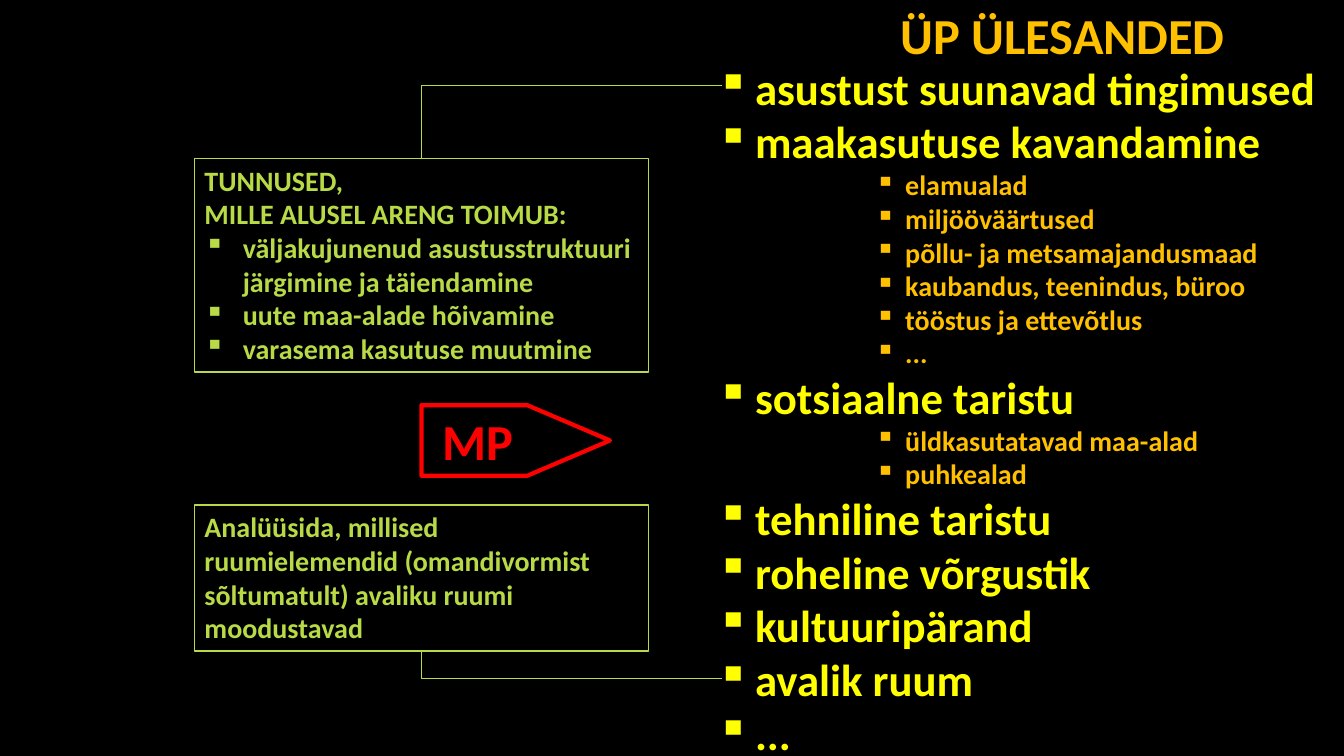
from lxml import etree
from pptx import Presentation
from pptx.dml.color import RGBColor
from pptx.enum.shapes import MSO_CONNECTOR as Connector, MSO_SHAPE as Shape
from pptx.enum.text import MSO_ANCHOR as Anchor, PP_ALIGN as Align
from pptx.oxml.ns import qn
from pptx.util import Inches, Pt

# Content
TITLE = "ÜP ÜLESANDED"
TASKS = [
    ("asustust suunavad tingimused", []),
    ("maakasutuse kavandamine", [
        "elamualad", "miljööväärtused", "põllu- ja metsamajandusmaad",
        "kaubandus, teenindus, büroo", "tööstus ja ettevõtlus", "..."]),
    ("sotsiaalne taristu", ["üldkasutatavad maa-alad", "puhkealad"]),
    ("tehniline taristu", []),
    ("roheline võrgustik", []),
    ("kultuuripärand", []),
    ("avalik ruum", []),
    ("...", []),
]
FEATURE_HEADING = ["TUNNUSED,", "MILLE ALUSEL ARENG TOIMUB:"]
FEATURES = [
    "väljakujunenud asustusstruktuuri järgimine ja täiendamine",
    "uute maa-alade hõivamine",
    "varasema kasutuse muutmine",
]
ANALYSIS = ("Analüüsida, millised ruumielemendid (omandivormist sõltumatult) "
            "avaliku ruumi moodustavad")
ARROW_LABEL = "MP"

COLORS = {"background": "000000", "title": "FFC000", "task": "FFFF00",
          "subtask": "FFC000", "box": "B7DA46", "arrow": "FF0000"}
FONT = "Calibri"

# Layout in inches
BOX_LEFT, BOX_WIDTH = 1.93, 4.5
FEATURE_TOP, FEATURE_HEIGHT = 1.57, 2.12
ANALYSIS_TOP, ANALYSIS_HEIGHT = 5.01, 1.45
BOX_CENTER = BOX_LEFT + BOX_WIDTH / 2
TASK_EDGE = 7.16
ARROW_WIDTH, ARROW_HEIGHT, ARROW_TIP = 1.87, 0.7, 0.82
BULLET_INDENT, SUB_MARGIN, SUB_INDENT = 0.38, 1.87, 0.3


def color(name):
    return RGBColor.from_string(COLORS[name])


def write(paragraph, text, size, color_name):
    paragraph.text = text
    for run in paragraph.runs:
        run.font.name = FONT
        run.font.size = Pt(size)
        run.font.bold = True
        run.font.color.rgb = color(color_name)


def add_bullet(paragraph, margin, hanging):
    properties = paragraph._p.get_or_add_pPr()
    properties.set("marL", str(Inches(margin)))
    properties.set("indent", str(-Inches(hanging)))
    etree.SubElement(properties, qn("a:buChar")).set("char", "▪")


def next_paragraph(frame):
    first = frame.paragraphs[0]
    return frame.add_paragraph() if first.runs else first


def outline(kind, left, top, width, height, color_name, weight):
    shape = slide.shapes.add_shape(
        kind, Inches(left), Inches(top), Inches(width), Inches(height))
    shape.shadow.inherit = False
    shape.fill.background()
    shape.line.color.rgb = color(color_name)
    shape.line.width = Pt(weight)
    shape.text_frame.word_wrap = True
    return shape


def add_box(top, height, lines):
    frame = outline(Shape.RECTANGLE, BOX_LEFT, top, BOX_WIDTH, height,
                    "box", 1).text_frame
    frame.vertical_anchor = Anchor.TOP
    for text, bulleted in lines:
        paragraph = next_paragraph(frame)
        paragraph.alignment = Align.LEFT
        if bulleted:
            add_bullet(paragraph, BULLET_INDENT, BULLET_INDENT)
        write(paragraph, text, 20, "box")


def link_to_task(task_y, box_y):
    link = slide.shapes.add_connector(
        Connector.ELBOW, Inches(TASK_EDGE), Inches(task_y),
        Inches(BOX_CENTER), Inches(box_y))
    link.line.color.rgb = color("box")
    link.line.width = Pt(1)
    properties = link._element.spPr
    properties.find(qn("a:prstGeom")).set("prst", "bentConnector2")
    etree.SubElement(properties, qn("a:effectLst"))


presentation = Presentation()
presentation.slide_width = Inches(13.33)
presentation.slide_height = Inches(7.5)
slide = presentation.slides.add_slide(presentation.slide_layouts[5])
slide.background.fill.solid()
slide.background.fill.fore_color.rgb = color("background")

# Title
title = slide.shapes.title
title.left, title.top = Inches(2.84), Inches(-0.01)
title.width, title.height = Inches(9.41), Inches(0.71)
title.text_frame.vertical_anchor = Anchor.TOP
heading = title.text_frame.paragraphs[0]
write(heading, TITLE, 36, "title")
heading.alignment = Align.RIGHT

# Task list
task_list = slide.shapes.add_textbox(
    Inches(7.01), Inches(0.55), Inches(6.32), Inches(7.1)).text_frame
task_list.word_wrap = True
for task, subtasks in TASKS:
    paragraph = next_paragraph(task_list)
    add_bullet(paragraph, BULLET_INDENT, BULLET_INDENT)
    write(paragraph, task, 32, "task")
    for subtask in subtasks:
        paragraph = next_paragraph(task_list)
        paragraph.level = 1
        add_bullet(paragraph, SUB_MARGIN, SUB_INDENT)
        write(paragraph, subtask, 20, "subtask")

# Boxes, each linked to its task
add_box(FEATURE_TOP, FEATURE_HEIGHT,
        [(line, False) for line in FEATURE_HEADING]
        + [(feature, True) for feature in FEATURES])
link_to_task(0.85, FEATURE_TOP)
add_box(ANALYSIS_TOP, ANALYSIS_HEIGHT, [(ANALYSIS, False)])
link_to_task(6.73, ANALYSIS_TOP + ANALYSIS_HEIGHT)

# Arrow
arrow = outline(Shape.PENTAGON, BOX_CENTER, 4.02, ARROW_WIDTH, ARROW_HEIGHT,
                "arrow", 3)
arrow.adjustments[0] = ARROW_TIP / ARROW_HEIGHT
arrow.text_frame.margin_left = Inches(0.21)
arrow.text_frame.vertical_anchor = Anchor.MIDDLE
label = arrow.text_frame.paragraphs[0]
label.alignment = Align.LEFT
write(label, ARROW_LABEL, 36, "arrow")

presentation.save("out.pptx")
